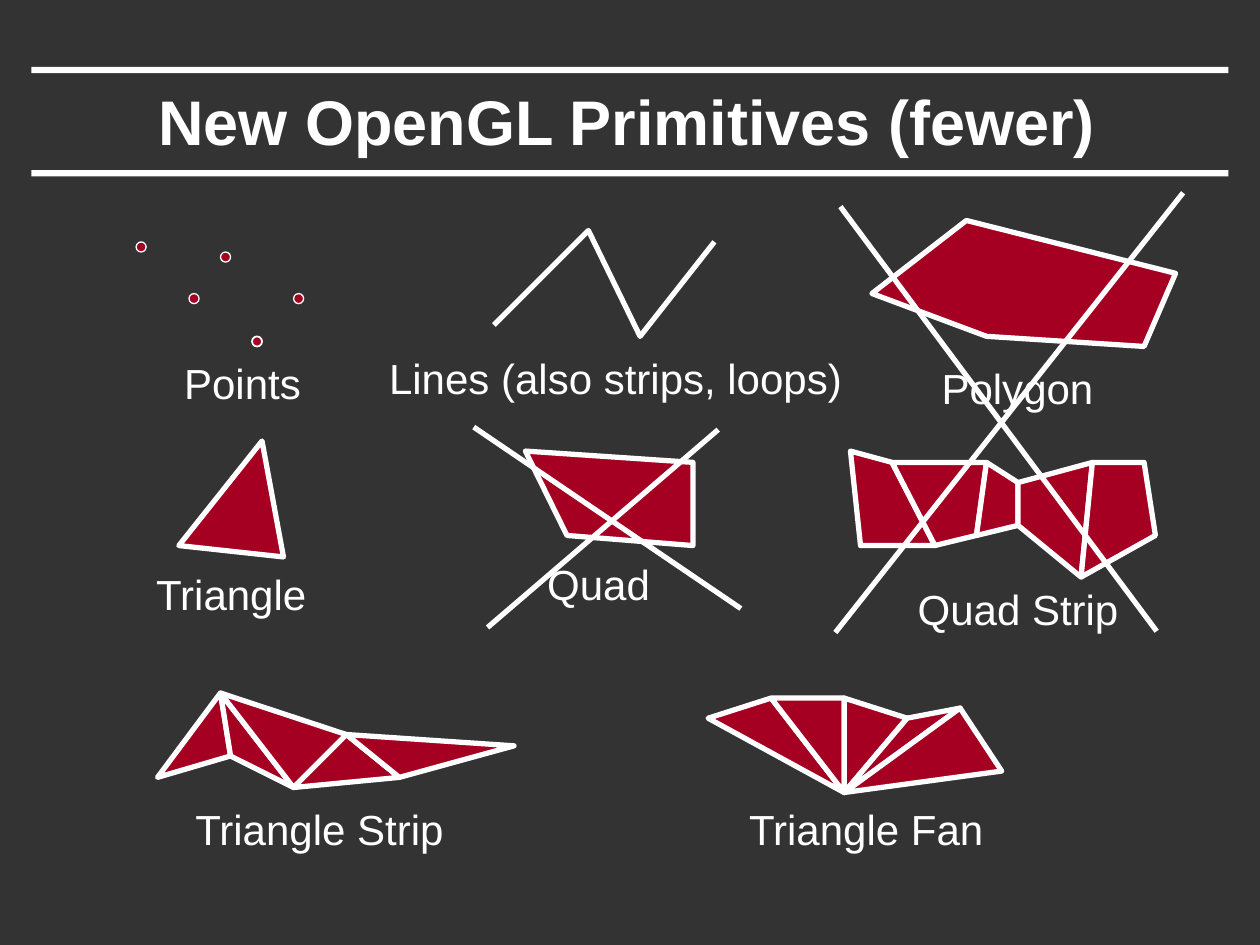
from itertools import pairwise

from lxml import etree
from pptx import Presentation
from pptx.dml.color import RGBColor
from pptx.enum.shapes import MSO_CONNECTOR as Connector, MSO_SHAPE as Shape
from pptx.enum.text import MSO_ANCHOR as Anchor, MSO_AUTO_SIZE as AutoSize, PP_ALIGN as Align
from pptx.oxml.ns import qn
from pptx.util import Inches, Pt

BACKGROUND, WHITE, RED = "333333", "FFFFFF", "A50021"
DOT_SIZE = 0.08

LABELS = [
    ("Points", 1.36, 2.79, 1.13),
    ("Lines (also strips, loops)", 2.97, 2.75, 3.83),
    ("Polygon", 7.37, 2.83, 1.41),
    ("Triangle", 1.13, 4.46, 1.41),
    ("Quad", 4.24, 4.38, 1.02),
    ("Quad Strip", 7.18, 4.58, 1.8),
    ("Triangle Strip", 1.44, 6.33, 2.19),
    ("Triangle Fan", 5.84, 6.33, 2.07),
]
DOTS = [(1.08, 1.92, 0.75), (1.75, 2, 0.75), (1.5, 2.33, 0.75), (2.33, 2.33, 0.75), (2, 2.67, 1)]
ZIGZAG = [(3.92, 2.58), (4.67, 1.83), (5.08, 2.67), (5.67, 1.92)]
POLYGON = [(6.92, 2.33), (7.67, 1.75), (9.33, 2.17), (9.08, 2.75), (7.83, 2.67)]
TRIANGLE = [(1.42, 4.33), (2.08, 3.5), (2.25, 4.42)]
QUAD = [(4.17, 3.58), (4.5, 4.25), (5.5, 4.33), (5.5, 3.67)]
QUAD_STRIP_EDGES = [
    ((6.75, 3.58), (6.83, 4.33)),
    ((7.08, 3.67), (7.42, 4.33)),
    ((7.83, 3.67), (7.75, 4.25)),
    ((8.08, 3.83), (8.08, 4.17)),
    ((8.67, 3.67), (8.58, 4.58)),
    ((9.08, 3.67), (9.17, 4.25)),
]
STRIP_POINTS = [(1.25, 6.17), (1.75, 5.5), (1.83, 6), (2.33, 6.25),
                (2.75, 5.83), (3.17, 6.17), (4.08, 5.92)]
STRIP_TRIANGLES = [(0, 1, 2), (1, 2, 3), (1, 3, 4), (3, 4, 5), (4, 6, 5)]
FAN_CENTRE = (6.7, 6.29)
FAN_RIM = [(5.62, 5.7), (6.12, 5.54), (6.7, 5.54), (7.2, 5.7), (7.62, 5.62), (7.95, 6.12)]
CROSS_LINES = [
    ((6.67, 1.64), (9.18, 5.01)),
    ((9.39, 1.53), (6.63, 5.02)),
    ((3.76, 3.39), (5.88, 4.83)),
    ((5.7, 3.41), (3.87, 4.98)),
]


def colour(hex_string):
    return RGBColor.from_string(hex_string)


def set_values(target, values):
    for name, value in values.items():
        setattr(target, name, value)


class Canvas:
    """Holds the style and the current slide."""

    line_width = 3
    font = {"name": "Arial", "size": Pt(24), "bold": False}
    title_font = font | {"size": Pt(36), "bold": True}
    label_frame = {"word_wrap": False, "auto_size": AutoSize.SHAPE_TO_FIT_TEXT}
    title_frame = {"word_wrap": True, "vertical_anchor": Anchor.MIDDLE}

    def __init__(self, slide):
        self.slide = slide
        self.shapes = slide.shapes
        fill = slide.background.fill
        fill.solid()
        fill.fore_color.rgb = colour(BACKGROUND)

    def paint(self, shape, fill=None, line_width=None):
        """Set fill and outline; None leaves that part empty."""
        shape.shadow.inherit = False
        if fill:
            shape.fill.solid()
            shape.fill.fore_color.rgb = colour(fill)
        else:
            shape.fill.background()
        if line_width:
            shape.line.color.rgb = colour(WHITE)
            shape.line.width = Pt(line_width)
        else:
            shape.line.fill.background()

    def preset(self, kind, left, top, width, height, fill, line_width=None):
        shape = self.shapes.add_shape(kind, *map(Inches, (left, top, width, height)))
        self.paint(shape, fill, line_width)

    def text(self, words, left, top, width, height, font, frame_values):
        box = self.shapes.add_textbox(*map(Inches, (left, top, width, height)))
        set_values(box.text_frame, frame_values)
        paragraph = box.text_frame.paragraphs[0]
        paragraph.alignment = Align.CENTER
        run = paragraph.add_run()
        run.text = words
        set_values(run.font, font)
        run.font.color.rgb = colour(WHITE)

    def outline(self, points, fill=RED, shapes=None):
        """Draw a closed filled outline, or an open path when fill is None."""
        start, *rest = [(Inches(x), Inches(y)) for x, y in points]
        builder = (shapes or self.shapes).build_freeform(*start)
        builder.add_line_segments(rest, close=bool(fill))
        self.paint(builder.convert_to_shape(), fill, self.line_width)

    def line(self, start, end):
        connector = self.shapes.add_connector(Connector.STRAIGHT, *map(Inches, (*start, *end)))
        connector.line.color.rgb = colour(WHITE)
        connector.line.width = Pt(self.line_width)
        etree.SubElement(connector._element.spPr, qn("a:effectLst"))


def main():
    presentation = Presentation()
    presentation.slide_width, presentation.slide_height = Inches(10), Inches(7.5)
    canvas = Canvas(presentation.slides.add_slide(presentation.slide_layouts[6]))

    for top in (1.35, 0.53):
        canvas.preset(Shape.RECTANGLE, 0.25, top, 9.5, 0.05, WHITE)
    canvas.text("New OpenGL Primitives (fewer)", 0.74, 0.58, 8.47, 0.75,
                canvas.title_font, canvas.title_frame)
    for words, left, top, width in LABELS:
        canvas.text(words, left, top, width, 0.5, canvas.font, canvas.label_frame)

    for left, top, line_width in DOTS:
        canvas.preset(Shape.OVAL, left, top, DOT_SIZE, DOT_SIZE, RED, line_width)
    canvas.outline(ZIGZAG, fill=None)
    for points in (POLYGON, TRIANGLE, QUAD):
        canvas.outline(points)

    quad_strip = canvas.shapes.add_group_shape()
    for (top, bottom), (next_top, next_bottom) in pairwise(QUAD_STRIP_EDGES):
        canvas.outline([top, bottom, next_bottom, next_top], shapes=quad_strip.shapes)
    for corners in STRIP_TRIANGLES:
        canvas.outline([STRIP_POINTS[corner] for corner in corners])
    for rim_edge in pairwise(FAN_RIM):
        canvas.outline([FAN_CENTRE, *rim_edge])

    for start, end in CROSS_LINES:
        canvas.line(start, end)

    presentation.save("out.pptx")


if __name__ == "__main__":
    main()
